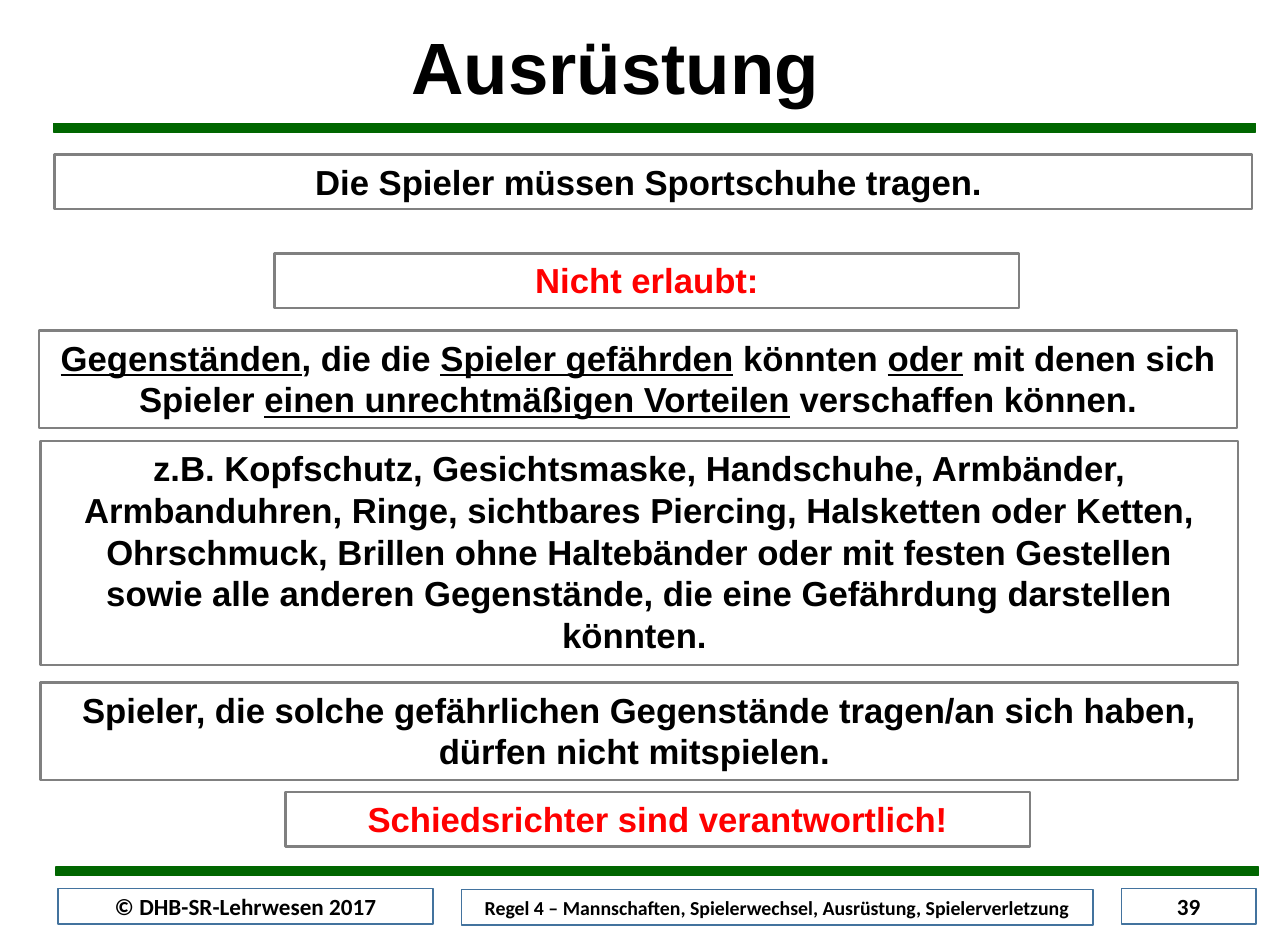
from pptx import Presentation
from pptx.dml.color import RGBColor
from pptx.enum.shapes import MSO_SHAPE
from pptx.enum.text import MSO_ANCHOR, PP_ALIGN
from pptx.util import Inches, Pt

COLORS = {"green": "006600", "gray": "808080", "blue": "43739E",
          "white": "FFFFFF", "black": "000000", "red": "FF0000"}

# Content
TITLE = "Ausrüstung "
BARS = [(0.45, 1.04), (0.47, 7.29)]
BAR_SIZE = (10.11, 0.07)

# Rule boxes: left, top, width, height, color, runs as (text, underlined)
RULES = [
    (0.46, 1.3, 10.07, 0.46, "black",
     [("Die Spieler müssen Sportschuhe tragen. ", False)]),
    (2.31, 2.13, 6.26, 0.46, "red", [("Nicht erlaubt:", False)]),
    (0.33, 2.78, 10.07, 0.82, "black",
     [("Gegenständen", True), (", die die ", False),
      ("Spieler gefährden", True), (" könnten ", False),
      ("oder", True), (" mit denen sich Spieler ", False),
      ("einen unrechtmäßigen Vorteilen", True),
      (" verschaffen können.", False)]),
    (0.34, 3.71, 10.07, 1.88, "black",
     [("z.B. Kopfschutz, Gesichtsmaske, Handschuhe, Armbänder, "
       "Armbanduhren, Ringe, sichtbares Piercing, Halsketten oder Ketten, "
       "Ohrschmuck, Brillen ohne Haltebänder oder mit festen Gestellen sowie "
       "alle anderen Gegenstände, die eine Gefährdung darstellen könnten. ",
       False)]),
    (0.34, 5.74, 10.07, 0.82, "black",
     [("Spieler, die solche gefährlichen Gegenstände tragen/an sich haben, "
       "dürfen nicht mitspielen. ", False)]),
    (2.4, 6.66, 6.26, 0.46, "red",
     [("Schiedsrichter sind verantwortlich!", False)]),
]

# Footer boxes: left, top, width, font size, text
FOOTER = [
    (0.49, 7.47, 3.15, 14, "© DHB-SR-Lehrwesen 2017"),
    (3.88, 7.48, 5.31, 12,
     "Regel 4 – Mannschaften, Spielerwechsel, Ausrüstung, Spielerverletzung"),
    (9.43, 7.47, 1.13, 14, "39"),
]
FOOTER_HEIGHT = 0.3


def color(name):
    return RGBColor.from_string(COLORS[name])


def add_box(slide, left, top, width, height, fill, line, line_width):
    shape = slide.shapes.add_shape(
        MSO_SHAPE.RECTANGLE, *map(Inches, (left, top, width, height)))
    shape.shadow.inherit = False
    shape.fill.solid()
    shape.fill.fore_color.rgb = color(fill)
    shape.line.color.rgb = color(line)
    shape.line.width = Pt(line_width)
    return shape


def write(shape, runs, font_name, size, text_color, anchor, margin=0.1):
    frame = shape.text_frame
    frame.word_wrap = True
    frame.vertical_anchor = anchor
    frame.margin_left = frame.margin_right = Inches(margin)
    frame.margin_top = frame.margin_bottom = Inches(0.05)
    paragraph = frame.paragraphs[0]
    paragraph.alignment = PP_ALIGN.CENTER
    paragraph.font.name = font_name
    paragraph.font.size = Pt(size)
    paragraph.font.bold = True
    paragraph.font.color.rgb = color(text_color)
    for text, underlined in runs:
        run = paragraph.add_run()
        run.text = text
        if underlined:
            run.font.underline = True
    return paragraph


def main():
    presentation = Presentation()
    presentation.slide_width = Inches(10.83)
    presentation.slide_height = Inches(7.92)
    slide = presentation.slides.add_slide(presentation.slide_layouts[5])

    # Title
    title = slide.shapes.title
    title.left, title.top = Inches(2.98), Inches(0.18)
    title.width, title.height = Inches(4.56), Inches(0.83)
    paragraph = write(title, [(TITLE, False)], "Arial", 44, "black",
                      MSO_ANCHOR.MIDDLE)
    paragraph.line_spacing = 0.9

    # Green bars
    for left, top in BARS:
        add_box(slide, left, top, *BAR_SIZE, "green", "green", 0.75)

    # Rule boxes
    for left, top, width, height, text_color, runs in RULES:
        box = add_box(slide, left, top, width, height, "white", "gray", 1.5)
        write(box, runs, "Arial", 21, text_color, MSO_ANCHOR.TOP, 0.11)

    # Footer boxes
    for left, top, width, size, text in FOOTER:
        box = add_box(slide, left, top, width, FOOTER_HEIGHT,
                      "white", "blue", 1)
        write(box, [(text, False)], "Calibri", size, "black",
              MSO_ANCHOR.MIDDLE)

    presentation.save("out.pptx")


if __name__ == "__main__":
    main()
